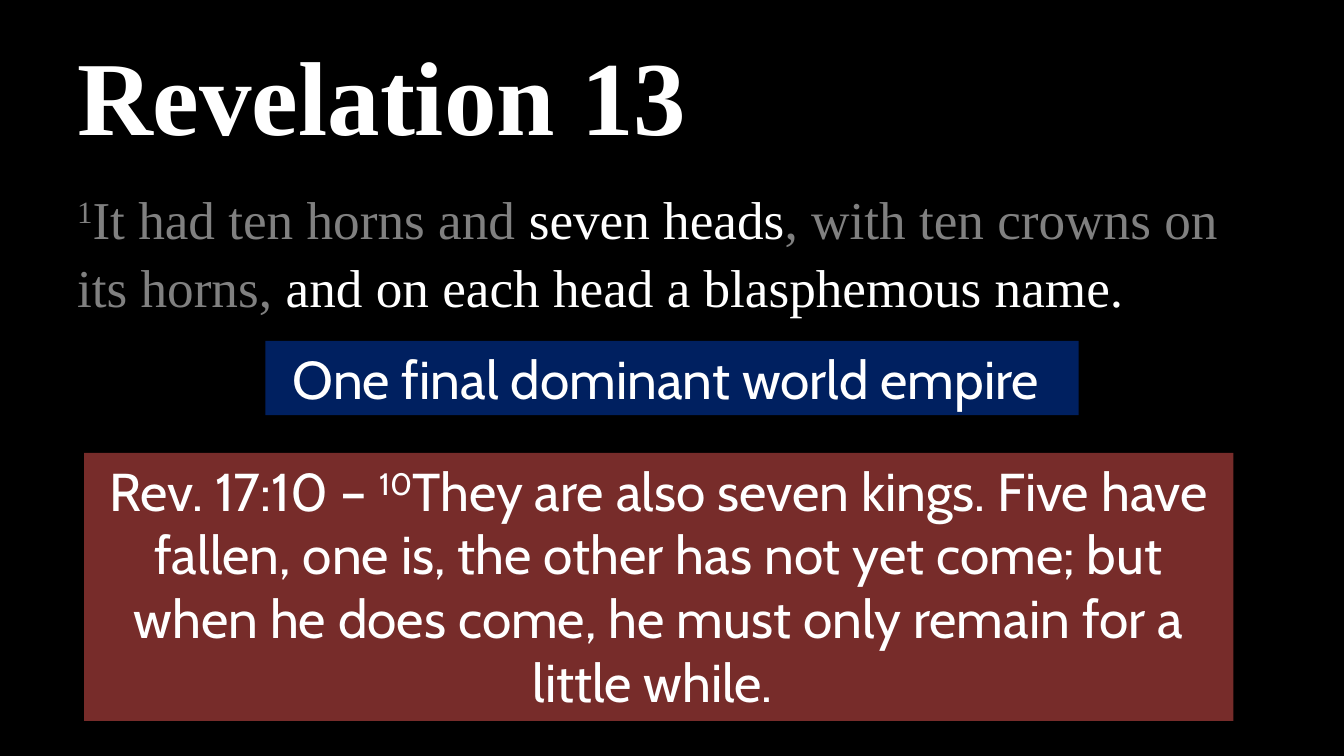
from pptx import Presentation
from pptx.dml.color import RGBColor
from pptx.enum.shapes import MSO_SHAPE
from pptx.enum.text import MSO_ANCHOR, PP_ALIGN
from pptx.util import Pt

RECTANGLE = MSO_SHAPE.RECTANGLE
TOP, MIDDLE = MSO_ANCHOR.TOP, MSO_ANCHOR.MIDDLE
LEFT, CENTER = PP_ALIGN.LEFT, PP_ALIGN.CENTER

BLACK = RGBColor(0x00, 0x00, 0x00)
WHITE = RGBColor(0xFF, 0xFF, 0xFF)
GRAY = RGBColor(0x80, 0x80, 0x80)
NAVY = RGBColor(0x00, 0x20, 0x60)
MAROON = RGBColor(0x77, 0x2C, 0x2A)

SERIF = "Times New Roman"
SANS = "Cabin"
TEXT_SIZE = 38


def add_run(p, text, font, color=WHITE, size=TEXT_SIZE, bold=False, raised=False):
    r = p.add_run()
    r.text = text
    r.font.name = font
    r.font.size = Pt(size)
    r.font.bold = bold
    r.font.color.rgb = color
    if raised:
        r._r.get_or_add_rPr().set("baseline", "30000")


def prepare_text(sp, align, anchor):
    """Set wrapping and alignment, and return the first paragraph."""
    tf = sp.text_frame
    tf.word_wrap = True
    tf.vertical_anchor = anchor
    p = tf.paragraphs[0]
    p.alignment = align
    return p


def add_text(s, left, top, width, height, anchor=TOP):
    sp = s.shapes.add_textbox(Pt(left), Pt(top), Pt(width), Pt(height))
    return prepare_text(sp, LEFT, anchor)


def add_banner(s, left, top, width, height, color):
    sp = s.shapes.add_shape(RECTANGLE, Pt(left), Pt(top), Pt(width), Pt(height))
    sp.shadow.inherit = False
    sp.fill.solid()
    sp.fill.fore_color.rgb = color
    sp.line.fill.background()
    return prepare_text(sp, CENTER, TOP)


def main():
    prs = Presentation()
    prs.slide_width, prs.slide_height = Pt(960), Pt(540)
    s = prs.slides.add_slide(prs.slide_layouts[6])
    s.background.fill.solid()
    s.background.fill.fore_color.rgb = BLACK

    title = add_text(s, 48, 21.6, 864, 90, MIDDLE)
    add_run(title, "Revelation 13", SERIF, size=75, bold=True)

    verse = add_text(s, 48, 126, 864, 356.4)
    verse.line_spacing = 1.07
    verse.space_before, verse.space_after = Pt(7.6), Pt(8)
    add_run(verse, "1", SERIF, GRAY, raised=True)
    add_run(verse, "It had ten horns and ", SERIF, GRAY)
    add_run(verse, "seven heads", SERIF)
    add_run(verse, ", with ten crowns on its horns,", SERIF, GRAY)
    add_run(verse, " and on each head a blasphemous name.", SERIF)

    kings = add_banner(s, 60, 323.5, 821, 191.5, MAROON)
    add_run(kings, "Rev. 17:10 – ", SANS)
    add_run(kings, "10", SANS, raised=True)
    add_run(kings, "They are also seven kings. Five have fallen, one is, the other "
                   "has not yet come; but when he does come, he must only remain "
                   "for a little while. ", SANS)

    empire = add_banner(s, 189.5, 243.5, 581, 53, NAVY)
    add_run(empire, "One final dominant world empire ", SANS)

    prs.save("out.pptx")


if __name__ == "__main__":
    main()
